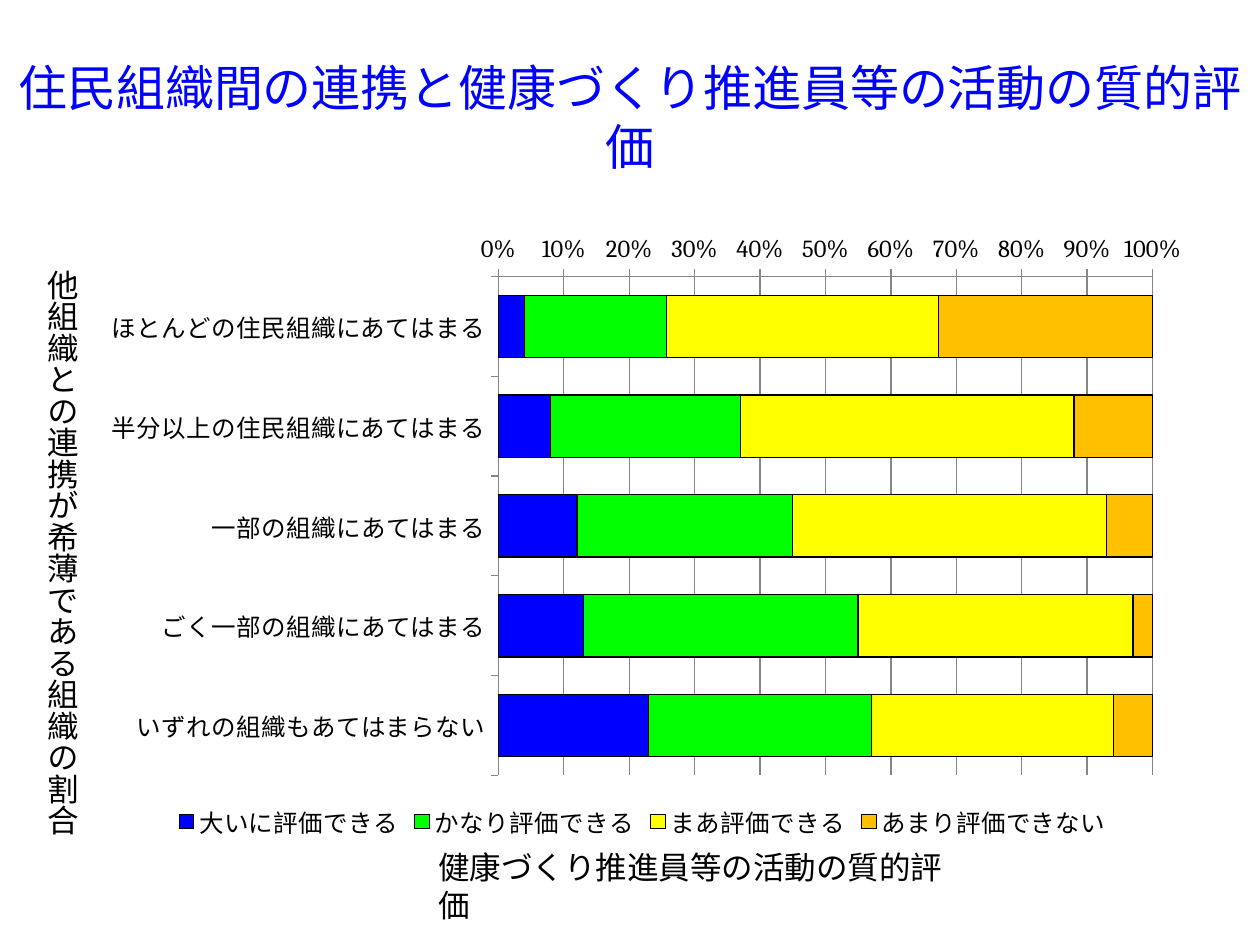
from pptx import Presentation
from pptx import util as u
from pptx.chart.data import CategoryChartData
from pptx.dml.color import RGBColor
from pptx.enum import chart as charts, text
from pptx.oxml import parse_xml
from pptx.oxml.ns import nsdecls

BLACK = RGBColor(0, 0, 0)
GRAY = RGBColor(0x86, 0x86, 0x86)
BLUE = RGBColor(0, 0, 255)
GREEN = RGBColor(0, 255, 0)
YELLOW = RGBColor(255, 255, 0)
ORANGE = RGBColor(255, 0xC0, 0)

CATEGORIES = [
    "ほとんどの住民組織にあてはまる",
    "半分以上の住民組織にあてはまる",
    "一部の組織にあてはまる",
    "ごく一部の組織にあてはまる",
    "いずれの組織もあてはまらない",
]
RATINGS = [
    ("大いに評価できる", (4, 8, 12, 13, 23), BLUE),
    ("かなり評価できる", (22, 29, 33, 42, 34), GREEN),
    ("まあ評価できる", (42, 51, 48, 42, 37), YELLOW),
    ("あまり評価できない", (33, 12, 7, 3, 6), ORANGE),
]
PLOT_AREA = {"x": 0.37, "y": 0.09, "w": 0.59, "h": 0.8}


def apply(target, values):
    for name, value in values.items():
        setattr(target, name, value)


def points(box):
    return [u.Pt(value) for value in box]


def write(frame, words, size, color):
    para = frame.paragraphs[0]
    span = para.add_run()
    span.text = words
    apply(span.font, {"name": "Calibri", "size": u.Pt(size)})
    span.font.color.rgb = color
    return para


def place_title(page, box, words):
    title = page.shapes.title
    apply(title, dict(zip(("left", "top", "width", "height"), points(box))))
    apply(title.text_frame, {"word_wrap": True,
                             "vertical_anchor": text.MSO_ANCHOR.MIDDLE,
                             "auto_size": text.MSO_AUTO_SIZE.NONE})
    write(title.text_frame, words, 28, BLUE).alignment = text.PP_ALIGN.CENTER


def place_label(page, box, words, vertical=False):
    frame = page.shapes.add_textbox(*points(box)).text_frame
    apply(frame, {"word_wrap": not vertical,
                  "auto_size": text.MSO_AUTO_SIZE.SHAPE_TO_FIT_TEXT})
    if vertical:
        frame._txBody.bodyPr.set("vert", "eaVert")
    write(frame, words, 18, BLACK)


def fix_plot_area(chart):
    places = "".join(f'<c:{key} val="{value}"/>' for key, value in PLOT_AREA.items())
    layout = parse_xml(
        f'<c:layout {nsdecls("c")}><c:manualLayout><c:layoutTarget val="inner"/>'
        f'<c:xMode val="edge"/><c:yMode val="edge"/>{places}'
        '</c:manualLayout></c:layout>')
    area = chart._chartSpace.chart.plotArea
    for old in area.findall(layout.tag):
        area.remove(old)
    area.insert(0, layout)


def place_chart(page, box):
    data = CategoryChartData(number_format="#,##0")
    data.categories = CATEGORIES
    for name, values, _ in RATINGS:
        data.add_series(name, values)
    chart = page.shapes.add_chart(
        charts.XL_CHART_TYPE.BAR_STACKED_100, *points(box), data).chart
    apply(chart, {"has_title": False, "has_legend": True})
    apply(chart.font, {"name": "Cambria", "size": u.Pt(14)})
    chart.font.color.rgb = BLACK
    apply(chart.legend, {"position": charts.XL_LEGEND_POSITION.BOTTOM,
                         "include_in_layout": False})

    plot = chart.plots[0]
    apply(plot, {"gap_width": 60, "overlap": 100, "vary_by_categories": False})
    for series, (_, _, color) in zip(plot.series, RATINGS):
        series.format.fill.solid()
        series.format.fill.fore_color.rgb = color
        series.format.line.color.rgb = BLACK
        series.format.line.width = u.Pt(0.75)

    chart.category_axis.reverse_order = True
    values = chart.value_axis
    values.has_major_gridlines = True
    apply(values.tick_labels, {"number_format": "0%",
                               "number_format_is_linked": False})
    for axis in (chart.category_axis, values):
        axis.major_tick_mark = charts.XL_TICK_MARK.OUTSIDE
    for part in (chart.category_axis, values, values.major_gridlines):
        part.format.line.color.rgb = GRAY
        part.format.line.width = u.Pt(0.75)
    fix_plot_area(chart)


def main():
    deck = Presentation()
    apply(deck, {"slide_width": u.Pt(720), "slide_height": u.Pt(540)})
    page = deck.slides.add_slide(deck.slide_layouts[5])
    place_title(page, (0, 21.6, 720, 90),
                "住民組織間の連携と健康づくり推進員等の活動の質的評価")
    place_chart(page, (50.4, 126, 633.6, 356.4))
    place_label(page, (13.7, 146.9, 36, 326.9),
                "他組織との連携が希薄である組織の割合", vertical=True)
    place_label(page, (243.4, 481, 314.6, 28.8),
                "健康づくり推進員等の活動の質的評価")
    deck.save("out.pptx")


if __name__ == "__main__":
    main()
